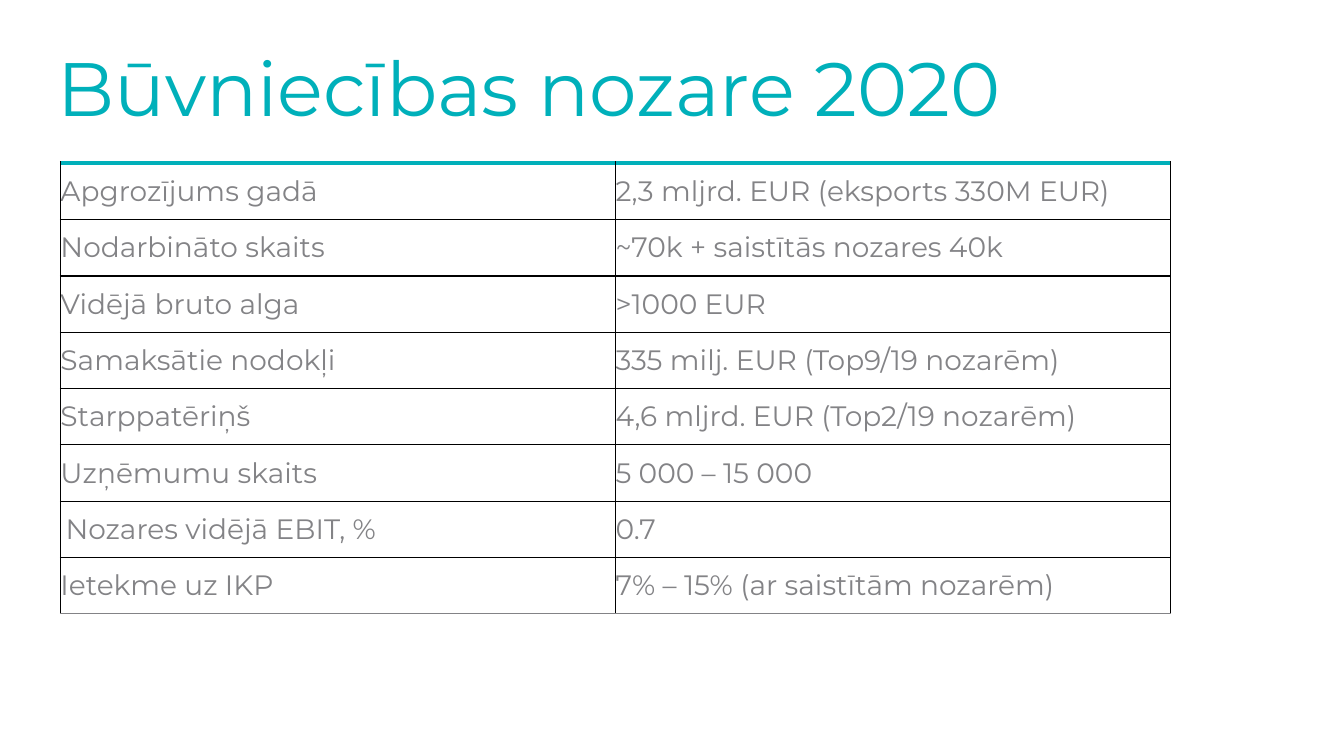
"""Build a slide with key figures of the construction industry in 2020."""
from lxml import etree
from pptx import Presentation
from pptx.dml.color import RGBColor
from pptx.enum.text import MSO_ANCHOR
from pptx.oxml.ns import qn
from pptx.util import Inches, Pt

TITLE = "Būvniecības nozare 2020"
FIGURES = [
    ("Apgrozījums gadā", "2,3 mljrd. EUR (eksports 330M EUR)"),
    ("Nodarbināto skaits", "~70k + saistītās nozares 40k"),
    ("Vidējā bruto alga", ">1000 EUR"),
    ("Samaksātie nodokļi", "335 milj. EUR (Top9/19 nozarēm)"),
    ("Starppatēriņš", "4,6 mljrd. EUR (Top2/19 nozarēm)"),
    ("Uzņēmumu skaits", "5 000 – 15 000"),
    ("Nozares vidējā EBIT, %", "0.7"),
    ("Ietekme uz IKP", "7% – 15% (ar saistītām nozarēm)"),
]
INSET_LABEL = "Nozares vidējā EBIT, %"

FONT = "Montserrat"
TEAL = RGBColor(0x00, 0xB0, 0xBA)
GREY = RGBColor(0x83, 0x83, 0x86)
BLACK = RGBColor(0x00, 0x00, 0x00)
WHITE = RGBColor(0xFF, 0xFF, 0xFF)
TOP, MIDDLE = MSO_ANCHOR.TOP, MSO_ANCHOR.MIDDLE
TABLE_WIDTH = Inches(11.01)
TABLE_HEIGHT = Inches(4.47)


def add_span(para, text, size, color):
    span = para.add_run()
    span.text = text
    span.font.name = FONT
    span.font.size = Pt(size)
    span.font.color.rgb = color


def set_borders(cell, borders):
    properties = cell._tc.get_or_add_tcPr()
    for position, (side, color, width) in enumerate(borders):
        line = etree.Element(qn(f"a:ln{side}"), w=str(Pt(width)))
        fill = etree.SubElement(line, qn("a:solidFill"))
        etree.SubElement(fill, qn("a:srgbClr"), val=str(color))
        properties.insert(position, line)


def add_title(page):
    box = page.shapes.add_textbox(Inches(0.47), Inches(0.46), Inches(11.5), Inches(1.45))
    frame = box.text_frame
    frame.word_wrap = True
    frame.vertical_anchor = TOP
    para = frame.paragraphs[0]
    para.line_spacing = 0.9
    add_span(para, TITLE, 54, TEAL)


def fill_cell(cell, text, is_first, is_last):
    margin = Inches(0.05 if text == INSET_LABEL else 0)
    cell.margin_left = cell.margin_right = margin
    cell.margin_top = cell.margin_bottom = margin
    cell.vertical_anchor = MIDDLE
    if is_last:
        cell.fill.solid()
        cell.fill.fore_color.rgb = WHITE
    else:
        cell.fill.background()
    top = ("T", TEAL, 3) if is_first else ("T", BLACK, 1)
    bottom = ("B", GREY, 1) if is_last else ("B", BLACK, 1)
    set_borders(cell, [("L", BLACK, 1), ("R", BLACK, 1), top, bottom])
    add_span(cell.text_frame.paragraphs[0], text, 20, GREY)


def add_figures(page):
    count = len(FIGURES)
    table = page.shapes.add_table(
        count, 2, Inches(0.6), Inches(1.62), TABLE_WIDTH, TABLE_HEIGHT
    ).table
    table.first_row = False
    table.horz_banding = False
    for column in table.columns:
        column.width = TABLE_WIDTH // 2
    for row_index, texts in enumerate(FIGURES):
        table.rows[row_index].height = TABLE_HEIGHT // count
        for column_index, text in enumerate(texts):
            cell = table.cell(row_index, column_index)
            fill_cell(cell, text, row_index == 0, row_index == count - 1)


def main():
    deck = Presentation()
    deck.slide_width = Inches(13.33)
    deck.slide_height = Inches(7.5)
    page = deck.slides.add_slide(deck.slide_layouts[6])
    add_title(page)
    add_figures(page)
    deck.save("out.pptx")


if __name__ == "__main__":
    main()
